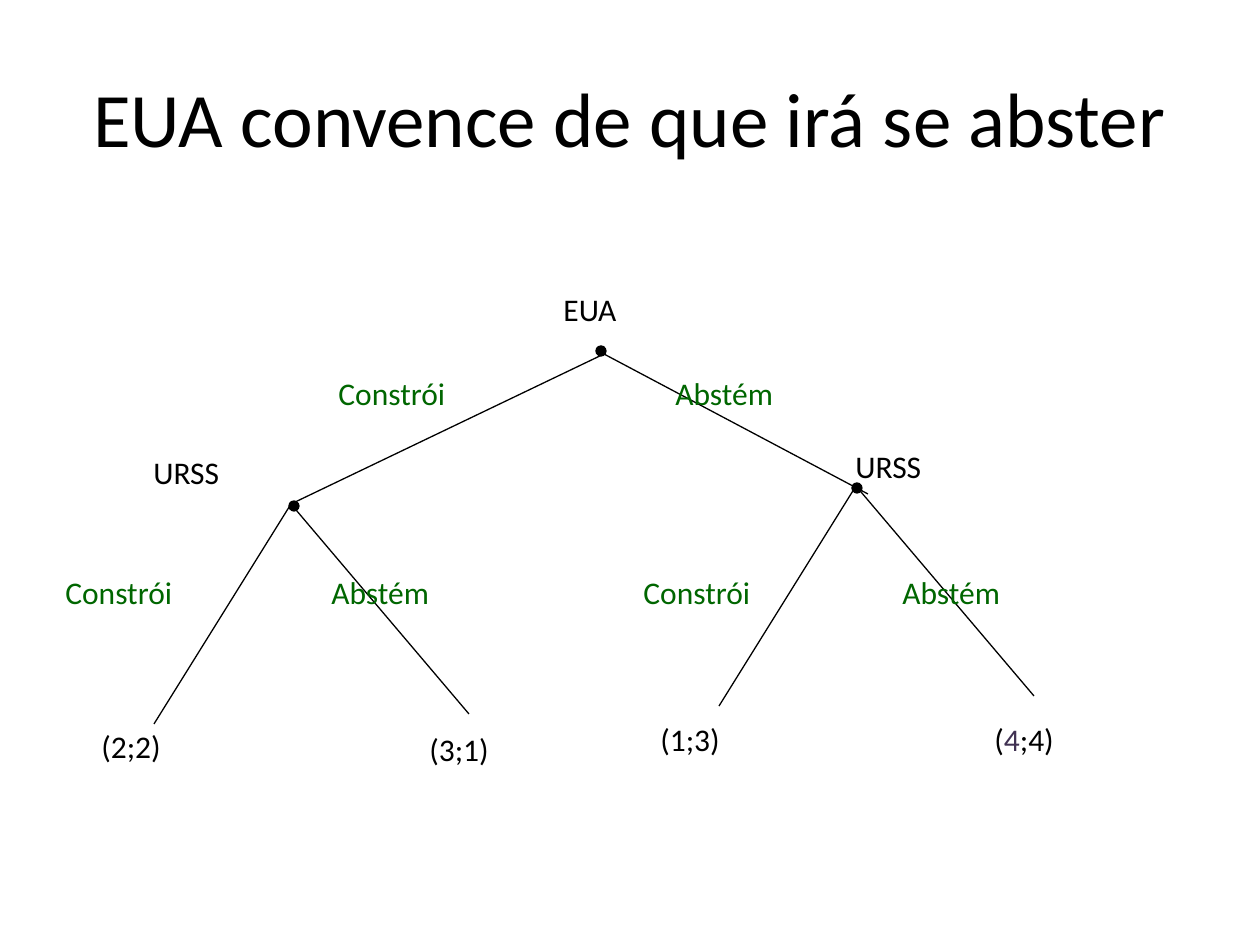
from lxml.etree import SubElement
from pptx import Presentation
from pptx.dml.color import RGBColor
from pptx.enum.shapes import MSO_CONNECTOR, MSO_SHAPE
from pptx.enum.text import MSO_ANCHOR, MSO_AUTO_SIZE, PP_ALIGN
from pptx.oxml.ns import qn
from pptx.util import Emu, Pt

EMU_PER_PX = 914400 / 126
COLORS = {"black": "000000", "action": "006600", "outcome": "403152"}
FONT = "Calibri"
LABEL_HEIGHT = 50
DOT_SIZE = 10
WIDTHS = {"EUA": 79, "URSS": 92, "Constrói": 134, "Abstém": 123}
PAYOFF_WIDTH = 86

ROOT = (604, 354)
ROOT_BRANCH_ENDS = [(291, 504), (868, 494)]
DECISIONS = [(291, 504), (856, 486)]
BRANCH_OFFSETS = [(-137, 220), (178, 210)]
DOTS = [(596, 346), (289, 501), (852, 483)]
PLAYERS = [("EUA", 551, 284), ("URSS", 141, 447), ("URSS", 843, 441)]
ACTIONS = [
    ("Constrói", 326, 368), ("Abstém", 663, 368),
    ("Constrói", 53, 567), ("Abstém", 319, 567),
    ("Constrói", 631, 567), ("Abstém", 890, 567),
]
PAYOFFS = [
    (["(2;2)"], 89, 721), (["(3;1)"], 417, 724),
    (["(1;3)"], 648, 714), (["(", "4", ";4)"], 982, 714),
]


def px(*lengths):
    return [Emu(round(length * EMU_PER_PX)) for length in lengths]


def color(name):
    return RGBColor.from_string(COLORS[name])


def set_font(font, size, color_name):
    font.name = FONT
    font.size = Pt(size)
    font.color.rgb = color(color_name)


def add_title(slide, text):
    title = slide.shapes.title
    title.left, title.top, title.width, title.height = px(63, 38, 1134, 158)
    title.text_frame.text = text
    title.text_frame.vertical_anchor = MSO_ANCHOR.MIDDLE
    paragraph = title.text_frame.paragraphs[0]
    paragraph.alignment = PP_ALIGN.CENTER
    set_font(paragraph.font, 44, "black")


def add_branch(slide, start, end):
    branch = slide.shapes.add_connector(MSO_CONNECTOR.STRAIGHT, *px(*start, *end))
    branch.line.color.rgb = color("black")
    branch.line.width = Pt(0.75)
    SubElement(branch._element.spPr, qn("a:effectLst"))


def add_dot(slide, left, top):
    dot = slide.shapes.add_shape(MSO_SHAPE.OVAL, *px(left, top, DOT_SIZE, DOT_SIZE))
    dot.shadow.inherit = False
    dot.fill.solid()
    dot.fill.fore_color.rgb = color("black")
    dot.line.color.rgb = color("black")
    dot.line.width = Pt(0.75)


def add_label(slide, parts, left, top, width, color_name="black"):
    label = slide.shapes.add_textbox(*px(left, top, width, LABEL_HEIGHT))
    label.text_frame.word_wrap = False
    label.text_frame.auto_size = MSO_AUTO_SIZE.SHAPE_TO_FIT_TEXT
    paragraph = label.text_frame.paragraphs[0]
    set_font(paragraph.font, 18, color_name)
    for part in parts:
        run = paragraph.add_run()
        run.text = part
        if part == "4":
            run.font.color.rgb = color("outcome")


def main():
    presentation = Presentation()
    presentation.slide_width, presentation.slide_height = px(1260, 945)
    slide = presentation.slides.add_slide(presentation.slide_layouts[5])
    add_title(slide, "EUA convence de que irá se abster")

    for end in ROOT_BRANCH_ENDS:
        add_branch(slide, ROOT, end)
    for x, y in DECISIONS:
        for across, down in BRANCH_OFFSETS:
            add_branch(slide, (x, y), (x + across, y + down))
    for left, top in DOTS:
        add_dot(slide, left, top)

    for player, left, top in PLAYERS:
        add_label(slide, [player], left, top, WIDTHS[player])
    for action, left, top in ACTIONS:
        add_label(slide, [action], left, top, WIDTHS[action], "action")
    for parts, left, top in PAYOFFS:
        add_label(slide, parts, left, top, PAYOFF_WIDTH)

    presentation.save("out.pptx")


if __name__ == "__main__":
    main()
